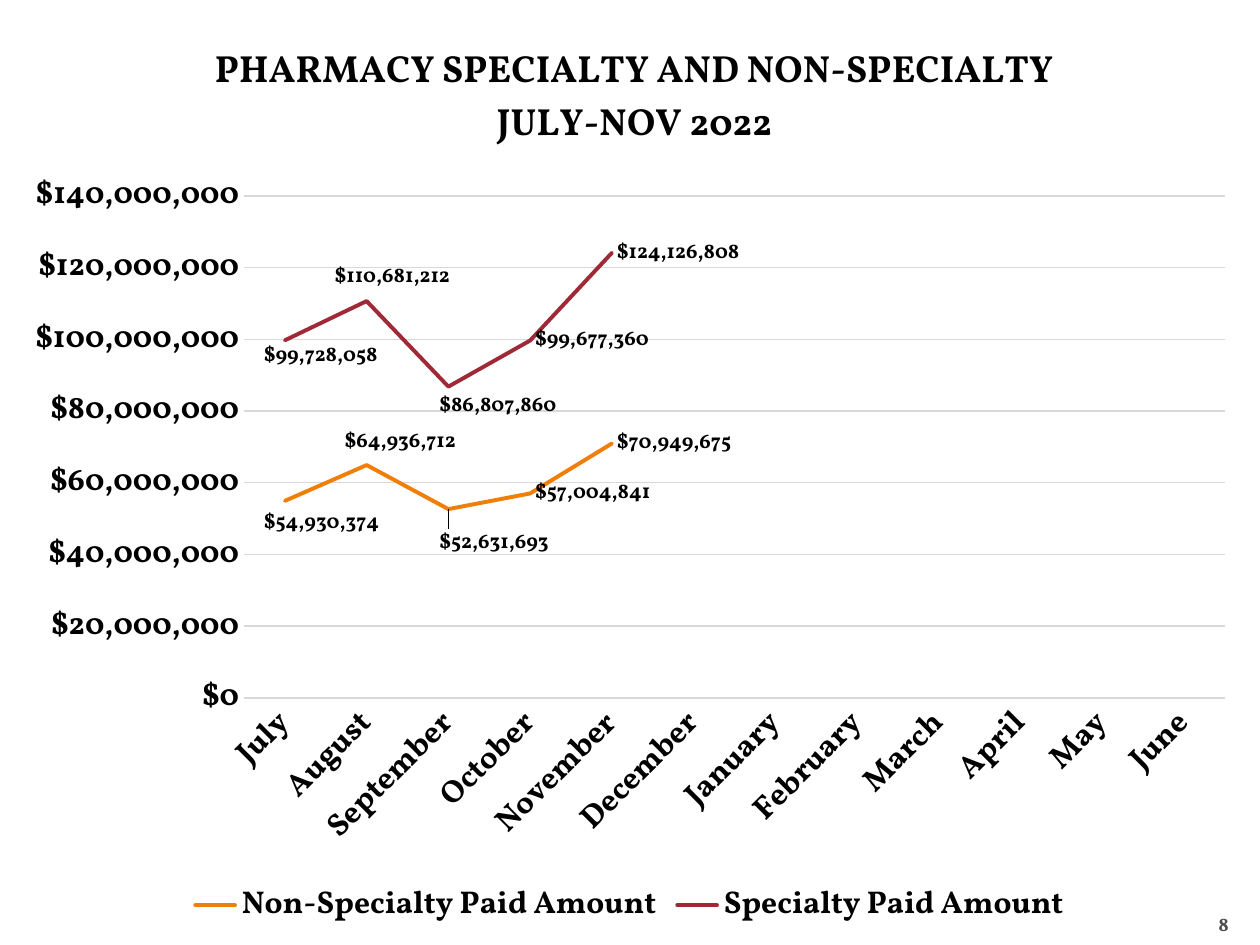
"""Build the pharmacy specialty and non-specialty paid amount slide."""
from lxml import etree
from pptx import Presentation
from pptx import util as u
from pptx.chart.data import CategoryChartData
from pptx.dml.color import RGBColor
from pptx.enum import chart as ch, text
from pptx.oxml.ns import qn

PX = 914400 // 126
FONT = "Vollkorn"
COLORS = {"text": "000000", "number": "4D4D4D", "grid": "D9D9D9"}
MONEY = '"$"#,##0'
TITLE = ["PHARMACY SPECIALTY AND NON-SPECIALTY", "JULY-NOV 2022"]
MONTHS = ["July", "August", "September", "October", "November", "December",
          "January", "February", "March", "April", "May", "June"]
SERIES = [
    {"name": "Non-Specialty Paid Amount", "color": "F07F09",
     "values": [54930374, 64936712, 52631693, 57004841, 70949675],
     "label_shifts": [(-26, 22), (-27, -23), (-14, 34)]},
    {"name": "Specialty Paid Amount", "color": "9F2936",
     "values": [99728058, 110681212, 86807860, 99677360, 124126808],
     "label_shifts": [(-26, 16), (-37, -24), (-14, 20)]},
]
CHART = (10, 10, 1239, 924)
PLOT = (244, 196, 981, 502)
TITLE_AT = (211, 39)
NUMBER = (1166, 885, 63, 50)


def rgb(value):
    return RGBColor.from_string(value)


def apply(obj, **values):
    for name, value in values.items():
        setattr(obj, name, value)


def style(font, size, color="text"):
    apply(font, name=FONT, size=u.Pt(size), bold=True)
    font.color.rgb = rgb(COLORS[color])


def draw_line(line, color, width):
    line.color.rgb = rgb(color)
    line.width = u.Pt(width)


def layout(**values):
    root = etree.Element(qn("c:layout"))
    manual = etree.SubElement(root, qn("c:manualLayout"))
    for name, value in values.items():
        etree.SubElement(manual, qn("c:" + name)).set("val", str(value))
    return root


def place(parent, index, element):
    for old in parent.findall(qn("c:layout")):
        parent.remove(old)
    parent.insert(index, element)


def fractions(x, y):
    return {"x": round((x - CHART[0]) / CHART[2], 4),
            "y": round((y - CHART[1]) / CHART[3], 4)}


def add_title(chart):
    tf = chart.chart_title.text_frame
    for i, line in enumerate(TITLE):
        p = tf.add_paragraph() if i else tf.paragraphs[0]
        r = p.add_run()
        r.text = line
        p.alignment = text.PP_ALIGN.CENTER
        style(r.font, 21.6)
    chart.chart_title.include_in_layout = False
    place(chart.chart_title._element, 1,
          layout(xMode="edge", yMode="edge", **fractions(*TITLE_AT)))


def format_axes(chart):
    for axis in (chart.category_axis, chart.value_axis):
        apply(axis, major_tick_mark=ch.XL_TICK_MARK.NONE,
              minor_tick_mark=ch.XL_TICK_MARK.NONE)
        style(axis.tick_labels.font, 18)
    months, money = chart.category_axis, chart.value_axis
    draw_line(months.format.line, COLORS["grid"], 0.75)
    months._element.find(qn("c:txPr")).find(qn("a:bodyPr")).set("rot", "-2700000")
    apply(money, minimum_scale=0, maximum_scale=140000000,
          major_unit=20000000, has_major_gridlines=True)
    apply(money.tick_labels, number_format=MONEY, number_format_is_linked=False)
    money.format.line.fill.background()
    draw_line(money.major_gridlines.format.line, COLORS["grid"], 0.75)


def format_series(series, item):
    series.smooth = False
    series.marker.style = ch.XL_MARKER_STYLE.NONE
    draw_line(series.format.line, item["color"], 2.25)
    series.format.line._get_or_add_ln().set("cap", "rnd")
    labels = series.data_labels
    apply(labels, show_value=True, number_format=MONEY,
          number_format_is_linked=False, position=ch.XL_LABEL_POSITION.RIGHT)
    style(labels.font, 12)
    for i, (dx, dy) in enumerate(item["label_shifts"]):
        label = series.points[i].data_label
        style(label.font, 12)
        label.position = ch.XL_LABEL_POSITION.RIGHT
        shift = layout(x=round(dx / CHART[2], 4), y=round(dy / CHART[3], 4))
        place(labels._element.findall(qn("c:dLbl"))[i], 1, shift)


def add_chart(s):
    data = CategoryChartData(number_format=MONEY)
    data.categories = MONTHS
    for item in SERIES:
        blanks = [None] * (len(MONTHS) - len(item["values"]))
        data.add_series(item["name"], item["values"] + blanks)
    chart = s.shapes.add_chart(ch.XL_CHART_TYPE.LINE,
                               *(v * PX for v in CHART), data).chart
    style(chart.font, 18)
    add_title(chart)
    format_axes(chart)
    chart.plots[0].vary_by_categories = False
    for series, item in zip(chart.plots[0].series, SERIES):
        format_series(series, item)
    chart.has_legend = True
    apply(chart.legend, position=ch.XL_LEGEND_POSITION.BOTTOM, include_in_layout=False)
    style(chart.legend.font, 18)
    plot_area = chart._chartSpace.chart.plotArea
    place(plot_area, 0, layout(
        layoutTarget="inner", xMode="edge", yMode="edge", **fractions(*PLOT[:2]),
        w=round(PLOT[2] / CHART[2], 4), h=round(PLOT[3] / CHART[3], 4)))


def add_number(s):
    tf = s.shapes.add_textbox(*(v * PX for v in NUMBER)).text_frame
    apply(tf, word_wrap=True, vertical_anchor=text.MSO_ANCHOR.BOTTOM,
          margin_left=0, margin_right=0, margin_bottom=0)
    p = tf.paragraphs[0]
    p.alignment = text.PP_ALIGN.RIGHT
    r = p.add_run()
    r.text = "8"
    style(r.font, 11, "number")


def main():
    prs = Presentation()
    apply(prs, slide_width=u.Inches(10), slide_height=u.Inches(7.5))
    s = prs.slides.add_slide(prs.slide_layouts[6])
    add_number(s)
    add_chart(s)
    prs.save("out.pptx")


if __name__ == "__main__":
    main()
